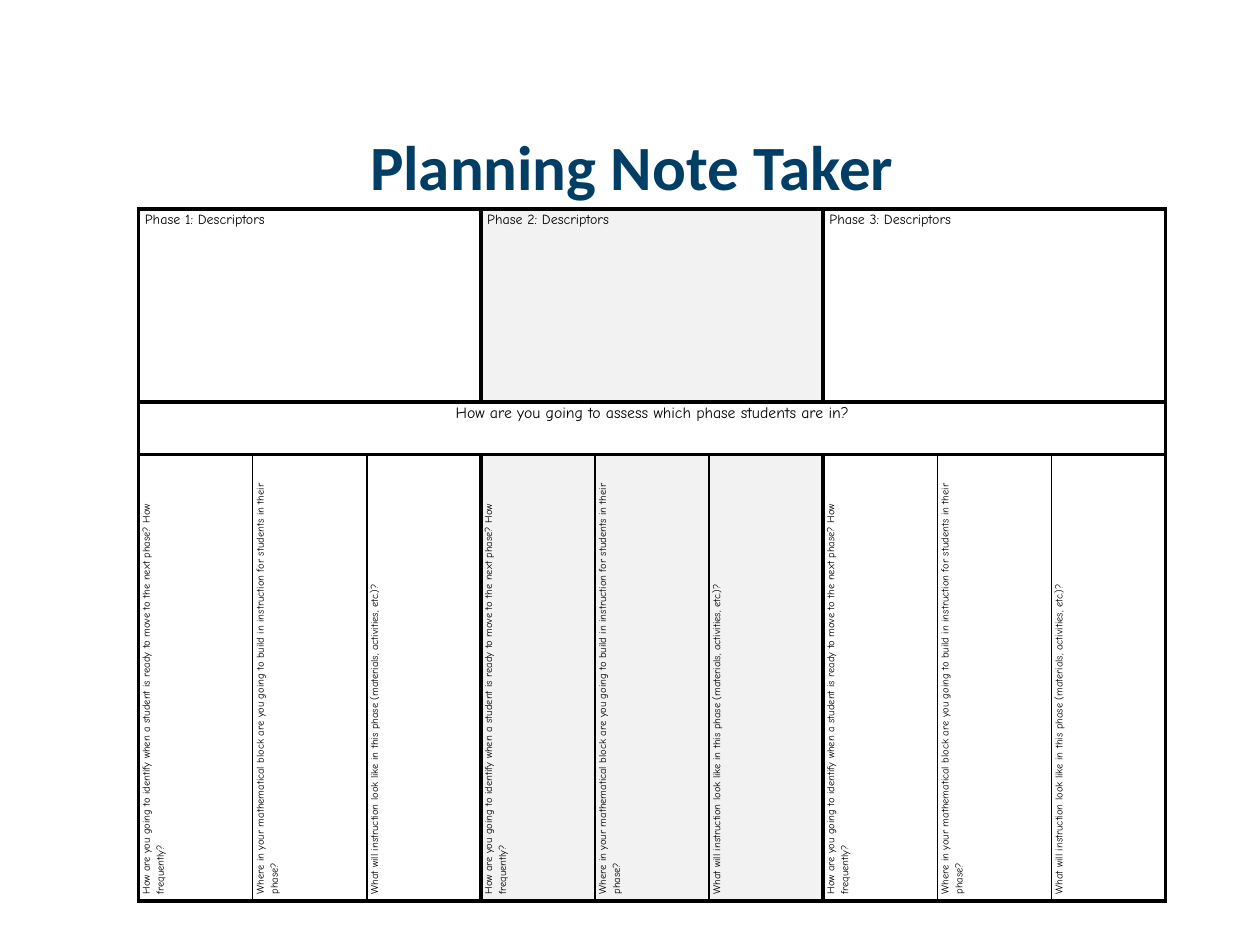
from lxml.etree import SubElement
from pptx import Presentation
from pptx.dml.color import RGBColor
from pptx.enum.text import MSO_ANCHOR, MSO_AUTO_SIZE, PP_ALIGN
from pptx.oxml.ns import qn
from pptx.util import Inches, Pt

TITLE = "Planning Note Taker"
PHASES = ["Phase 1: Descriptors", "Phase 2: Descriptors", "Phase 3: Descriptors"]
ASSESSMENT = "How are you going to assess which phase students are in?"
QUESTIONS = [
    "How are you going to identify when a student is ready to move to the next phase? How frequently?",
    "Where in your mathematical block are you going to build in instruction for students in their phase?",
    "What will instruction look like in this phase (materials, activities, etc.)?",
]
COLORS = {"title": "003E66", "ink": "000000", "shade": "F2F2F2"}
SHADED_PHASE = 1
THICK, THIN = 2.25, 1
ROW_HEIGHTS = [1.53, 0.42, 2.53]
TABLE_LEFT, TABLE_TOP, TABLE_WIDTH = 1.1, 1.66, 8.15


def format_text(para, font, size, color, align):
    para.alignment = align
    for span in para.runs:
        span.font.name = font
        span.font.size = Pt(size)
        span.font.color.rgb = RGBColor.from_string(COLORS[color])


def draw_borders(cell, left=THICK, right=THICK):
    properties = cell._tc.get_or_add_tcPr()
    for side, width in (("L", left), ("R", right), ("T", THICK), ("B", THICK)):
        line = SubElement(properties, qn(f"a:ln{side}"), w=str(Pt(width)))
        fill = SubElement(line, qn("a:solidFill"))
        SubElement(fill, qn("a:srgbClr"), val=COLORS["ink"])


def shade_cell(cell, phase):
    if phase == SHADED_PHASE:
        cell.fill.solid()
        cell.fill.fore_color.rgb = RGBColor.from_string(COLORS["shade"])
    else:
        cell.fill.background()


def write_cell(cell, text, size, align=PP_ALIGN.LEFT):
    cell.margin_left = cell.margin_right = Inches(0.05)
    cell.margin_top = cell.margin_bottom = 0
    cell.text_frame.text = text
    para = cell.text_frame.paragraphs[0]
    para.line_spacing = 1.15
    format_text(para, "Comic Neue", size, "ink", align)


def add_title(page):
    title = page.shapes.title
    title.left, title.top = Inches(0.3), Inches(0.96)
    title.width, title.height = Inches(9.43), Inches(0.71)
    frame = title.text_frame
    frame.text = TITLE
    frame.word_wrap = True
    frame.auto_size = MSO_AUTO_SIZE.SHAPE_TO_FIT_TEXT
    frame.vertical_anchor = MSO_ANCHOR.TOP
    format_text(frame.paragraphs[0], "Calibri", 36, "title", PP_ALIGN.CENTER)
    frame.paragraphs[0].runs[0].font.bold = True


def add_planner(page):
    group = len(QUESTIONS)
    columns = len(PHASES) * group
    table = page.shapes.add_table(
        len(ROW_HEIGHTS), columns, Inches(TABLE_LEFT), Inches(TABLE_TOP),
        Inches(TABLE_WIDTH), Inches(sum(ROW_HEIGHTS))).table
    table.first_row = table.horz_banding = False
    for row, height in zip(table.rows, ROW_HEIGHTS):
        row.height = Inches(height)

    for column in range(columns):
        phase, question = divmod(column, group)
        for row in (0, 1):
            draw_borders(table.cell(row, column))
        shade_cell(table.cell(0, column), phase)
        shade_cell(table.cell(1, column), None)

        cell = table.cell(2, column)
        draw_borders(cell, THIN if question else THICK,
                     THIN if question < group - 1 else THICK)
        shade_cell(cell, phase)
        write_cell(cell, QUESTIONS[question], 6)
        cell._tc.get_or_add_tcPr().set("vert", "vert270")

    for phase, text in enumerate(PHASES):
        start = phase * group
        table.cell(0, start).merge(table.cell(0, start + group - 1))
        write_cell(table.cell(0, start), text, 8)

    table.cell(1, 0).merge(table.cell(1, columns - 1))
    write_cell(table.cell(1, 0), ASSESSMENT, 9, PP_ALIGN.CENTER)


def main():
    deck = Presentation()
    deck.slide_width, deck.slide_height = Inches(10), Inches(7.5)
    page = deck.slides.add_slide(deck.slide_layouts[5])
    add_title(page)
    add_planner(page)
    deck.save("out.pptx")


if __name__ == "__main__":
    main()
